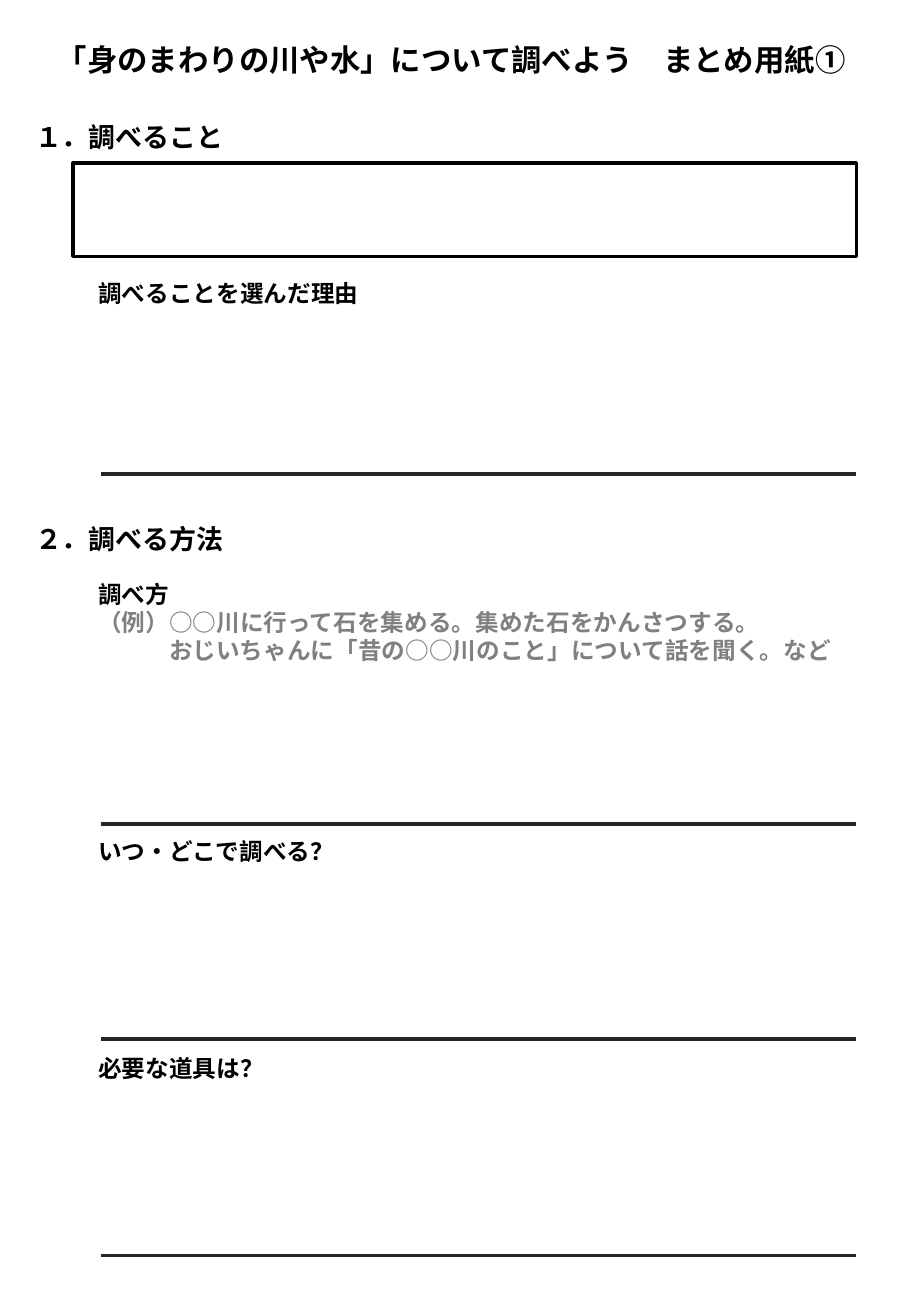
"""Build a one-page worksheet for researching local rivers and water."""
from lxml.etree import SubElement
from pptx import Presentation
from pptx.dml.color import RGBColor
from pptx.enum.shapes import MSO_CONNECTOR as Connector, MSO_SHAPE as Shape
from pptx.enum.text import MSO_AUTO_SIZE as AutoSize
from pptx.oxml.ns import qn
from pptx.util import Inches, Pt

FONT = "Noto Sans CJK JP"
BLACK, GRAY, RULE = "000000", "808080", "262626"
RIGHT_EDGE = 7.05


def color(value):
    return RGBColor.from_string(value)


def add_text(para, text, size, shade=BLACK):
    span = para.add_run()
    span.text = text
    span.font.size = Pt(size)
    span.font.bold = True
    span.font.color.rgb = color(shade)
    span.font.name = FONT
    SubElement(span.font._element, qn("a:ea"), typeface=FONT)


deck = Presentation()
deck.slide_width, deck.slide_height = Inches(7.5), Inches(10.83)
page = deck.slides.add_slide(deck.slide_layouts[6])

answer = page.shapes.add_shape(
    Shape.RECTANGLE, Inches(0.6), Inches(1.34), Inches(RIGHT_EDGE - 0.6), Inches(0.77))
answer.shadow.inherit = False
answer.fill.solid()
answer.fill.fore_color.rgb = color("FFFFFF")
answer.line.color.rgb = color(BLACK)
answer.line.width = Pt(2)

for top in (3.9, 6.78, 8.55, 10.33):
    rule = page.shapes.add_connector(
        Connector.STRAIGHT, Inches(0.83), Inches(top), Inches(RIGHT_EDGE), Inches(top))
    rule.line.color.rgb = color(RULE)
    rule.line.width = Pt(2)
    SubElement(rule._element.spPr, qn("a:effectLst"))

labels = [
    ("「身のまわりの川や水」について調べよう　まとめ用紙①", 18, 0.37, 0.29, 6.77, 0.4),
    ("１．調べること", 16, 0.19, 0.94, 1.77, 0.37),
    ("２．調べる方法", 16, 0.19, 4.25, 1.77, 0.37),
    ("調べることを選んだ理由", 14, 0.71, 2.25, 2.36, 0.34),
    ("いつ・どこで調べる？", 14, 0.71, 6.84, 2.17, 0.34),
    ("必要な道具は？", 14, 0.71, 8.62, 1.58, 0.34),
    ("調べ方", 14, 0.71, 4.72, 6.29, 0.81),
]
for text, size, left, top, width, height in labels:
    box = page.shapes.add_textbox(Inches(left), Inches(top), Inches(width), Inches(height))
    frame = box.text_frame
    frame.word_wrap = False
    frame.auto_size = AutoSize.SHAPE_TO_FIT_TEXT
    add_text(frame.paragraphs[0], text, size)

    if text == "調べ方":
        example = frame.add_paragraph()
        add_text(example, "（例）○○川に行って石を集める。集めた石をかんさつする。", size, GRAY)
        second = frame.add_paragraph()
        add_text(second, "おじいちゃんに「昔の○○川のこと」について話を聞く。など", size, GRAY)
        indent = second._element.get_or_add_pPr()
        indent.set("marL", str(Pt(3 * size)))
        indent.set("indent", "0")

deck.save("out.pptx")
